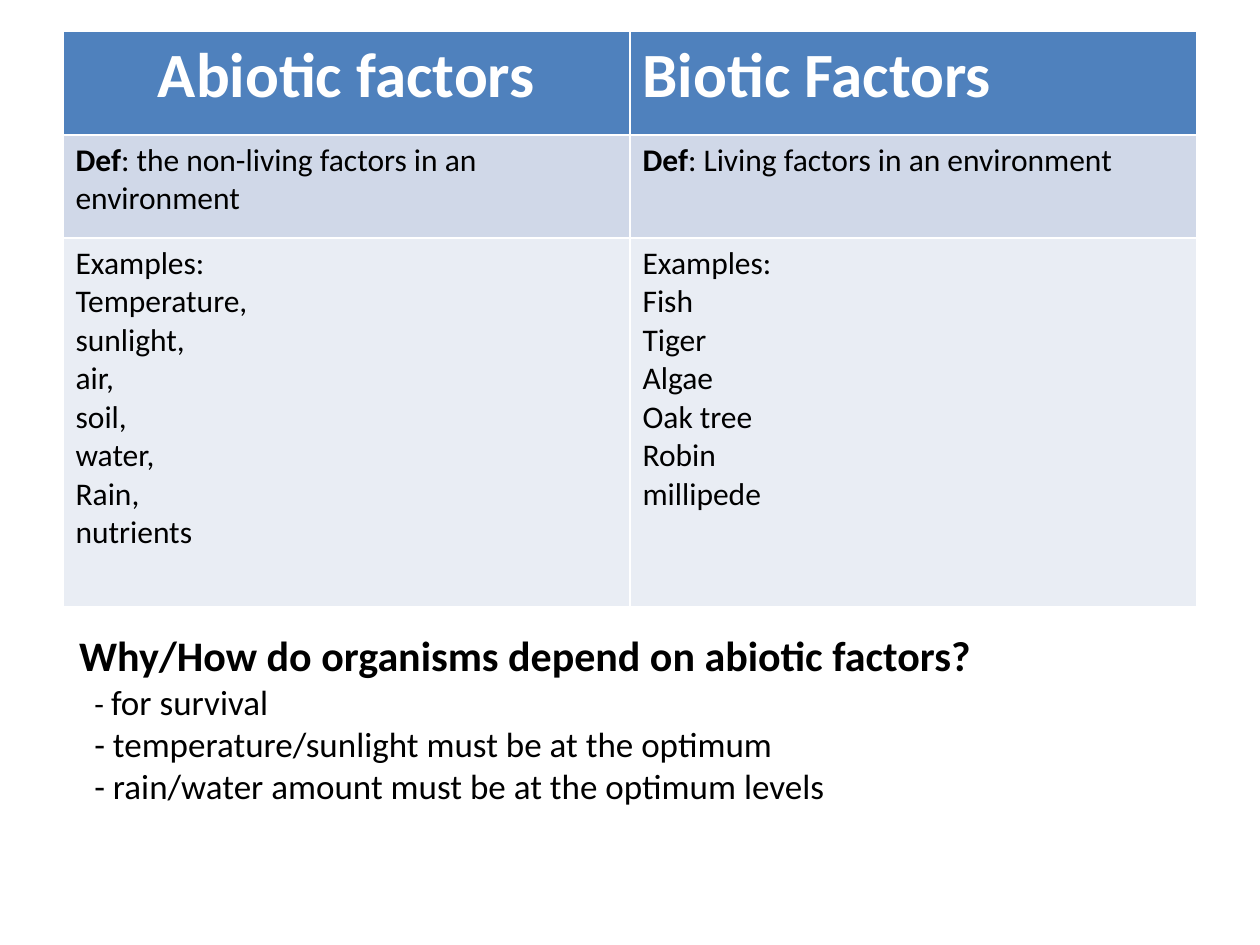
from pptx import Presentation
from pptx import util as u
from pptx.dml.color import RGBColor
from pptx.enum import text

HEAD = {"size": 36, "bold": True, "color": "FFFFFF"}
TERM = {"size": 18, "bold": True, "color": "000000"}
BODY = {**TERM, "bold": False}
QUESTION = {**TERM, "size": 24}
ANSWER = {**BODY, "size": 20}

COLUMNS = [
    ("Abiotic factors", ": the non-living factors in an environment",
     ["Temperature,", "sunlight,", "air,", "soil,", "water,", "Rain,", "nutrients"]),
    ("Biotic Factors", ": Living factors in an environment",
     ["Fish", "Tiger", "Algae", "Oak tree", "Robin", "millipede"]),
]
ROWS = [(0.82, "4F81BD"), (0.82, "D0D8E8"), (2.93, "E9EDF4")]
COL_W = 4.5
ANSWERS = [
    [("- ", BODY), ("for survival", ANSWER)],
    [("- temperature/sunlight must be at the optimum", ANSWER)],
    [("- rain/water amount must be at the optimum levels", ANSWER)],
]
INDENT = 0.12


def rgb(value):
    return RGBColor.from_string(value)


def write(tf, paragraphs):
    for i, runs in enumerate(paragraphs):
        p = tf.paragraphs[0] if i == 0 else tf.add_paragraph()
        for words, style in runs:
            r = p.add_run()
            r.text = words
            font = {"name": "Calibri", "size": u.Pt(style["size"]), "bold": style["bold"]}
            for key, value in font.items():
                setattr(r.font, key, value)
            r.font.color.rgb = rgb(style["color"])


def add_factors(s):
    height = sum(h for h, _ in ROWS)
    table = s.shapes.add_table(
        len(ROWS), len(COLUMNS), u.Inches(0.5), u.Inches(0.25),
        u.Inches(COL_W * len(COLUMNS)), u.Inches(height)).table
    for row, (h, _) in zip(table.rows, ROWS):
        row.height = u.Inches(h)
    for c, (title, definition, examples) in enumerate(COLUMNS):
        table.columns[c].width = u.Inches(COL_W)
        contents = [
            [[(title, HEAD)]],
            [[("Def", TERM), (definition, BODY)]],
            [[(line, BODY)] for line in ["Examples:", *examples]],
        ]
        for n, (content, (_, fill)) in enumerate(zip(contents, ROWS)):
            cell = table.cell(n, c)
            cell.fill.solid()
            cell.fill.fore_color.rgb = rgb(fill)
            write(cell.text_frame, content)
    table.cell(0, 0).text_frame.paragraphs[0].alignment = text.PP_ALIGN.CENTER


def add_question(s):
    sp = s.shapes.add_textbox(*map(u.Inches, (0.53, 4.95, 8.92, 1.51)))
    tf = sp.text_frame
    tf.word_wrap = True
    tf.auto_size = text.MSO_AUTO_SIZE.SHAPE_TO_FIT_TEXT
    write(tf, [[("Why/How do organisms depend on abiotic factors?", QUESTION)], *ANSWERS])
    for p in tf.paragraphs[1:]:
        pPr = p._p.get_or_add_pPr()
        pPr.set("marL", str(u.Inches(INDENT)))
        pPr.set("indent", "0")


def main():
    prs = Presentation()
    prs.slide_width, prs.slide_height = u.Inches(10), u.Inches(7.5)
    s = prs.slides.add_slide(prs.slide_layouts[6])
    add_factors(s)
    add_question(s)
    prs.save("out.pptx")


if __name__ == "__main__":
    main()
